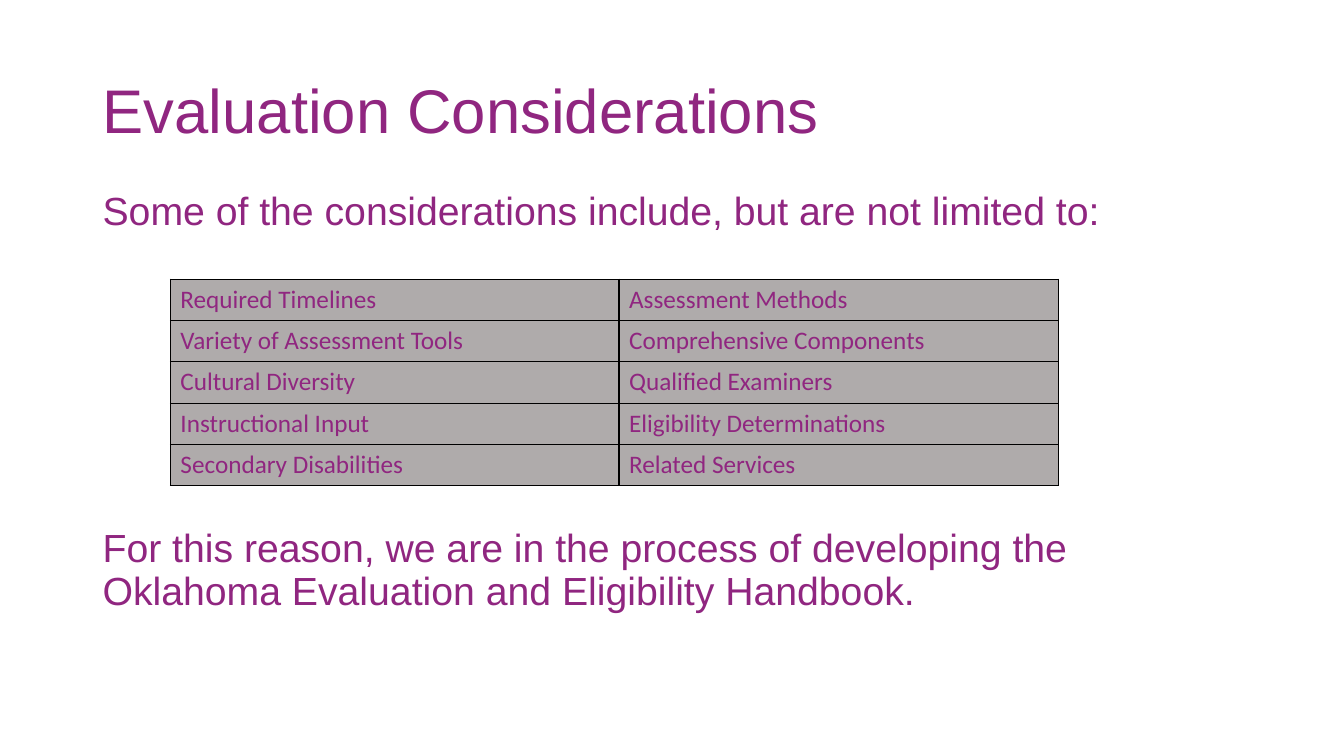
from lxml import etree
from pptx import Presentation
from pptx.dml.color import RGBColor
from pptx.enum.text import MSO_ANCHOR as ANCHOR, MSO_AUTO_SIZE as AUTO_SIZE, PP_ALIGN as ALIGN
from pptx.oxml import parse_xml
from pptx.oxml.ns import nsdecls
from pptx.util import Inches, Pt

PURPLE = RGBColor(0x90, 0x26, 0x80)
GRAY = RGBColor(0xAF, 0xAB, 0xAB)
BLACK = RGBColor(0, 0, 0)

CONSIDERATIONS = [
    ("Required Timelines", "Assessment Methods"),
    ("Variety of Assessment Tools", "Comprehensive Components"),
    ("Cultural Diversity", "Qualified Examiners"),
    ("Instructional Input", "Eligibility Determinations"),
    ("Secondary Disabilities", "Related Services"),
]


def write(tf, text, size=28, font="Arial", color=PURPLE, spacing=0.9, anchor=ANCHOR.TOP):
    tf.word_wrap = True
    tf.vertical_anchor = anchor
    p = tf.paragraphs[0]
    p.alignment = ALIGN.LEFT
    p.line_spacing = spacing
    p.space_before = Pt(0)
    r = p.add_run()
    r.text = text
    r.font.size = Pt(size)
    r.font.name = font
    r.font.color.rgb = color


class SlideBuilder:
    left, width = 0.92, 11.5

    def __init__(self, prs):
        self.slide = prs.slides.add_slide(prs.slide_layouts[5])

    def title(self, text, top, height):
        sp = self.slide.shapes.title
        sp.left, sp.top = Inches(self.left), Inches(top)
        sp.width, sp.height = Inches(self.width), Inches(height)
        sp.text_frame.auto_size = AUTO_SIZE.NONE
        write(sp.text_frame, text, size=44, anchor=ANCHOR.MIDDLE)

    def text(self, text, top, height):
        sp = self.slide.shapes.add_textbox(
            Inches(self.left), Inches(top), Inches(self.width), Inches(height))
        write(sp.text_frame, text)

    def table(self, rows, left, top, col_widths, row_height):
        frame = self.slide.shapes.add_table(
            len(rows), len(col_widths), Inches(left), Inches(top),
            Inches(sum(col_widths)), Inches(row_height * len(rows)))
        table = frame.table
        table.first_row = table.horz_banding = False
        for column, width in zip(table.columns, col_widths):
            column.width = Inches(width)
        for i, row in enumerate(rows):
            for j, text in enumerate(row):
                cell = table.cell(i, j)
                write(cell.text_frame, text, size=18, font="Calibri", spacing=1.0)
                cell.fill.solid()
                cell.fill.fore_color.rgb = GRAY
                self.borders(cell)

    def borders(self, cell):
        tc_pr = cell._tc.get_or_add_tcPr()
        for i, side in enumerate(("lnL", "lnR", "lnT", "lnB")):
            tc_pr.insert(i, parse_xml(
                f'<a:{side} {nsdecls("a")} w="{Pt(1)}"><a:solidFill>'
                f'<a:srgbClr val="{BLACK}"/></a:solidFill></a:{side}>'))


def main():
    prs = Presentation()
    prs.slide_width, prs.slide_height = Inches(13.33), Inches(7.5)
    s = SlideBuilder(prs)
    s.title("Evaluation Considerations", 0.4, 1.45)
    s.text("Some of the considerations include, but are not limited to:", 1.85, 0.6)
    s.table(CONSIDERATIONS, 1.69, 2.77, (4.45, 4.36), 0.41)
    s.text("For this reason, we are in the process of developing the "
           "Oklahoma Evaluation and Eligibility Handbook.", 5.2, 1)
    prs.save("out.pptx")


if __name__ == "__main__":
    main()
